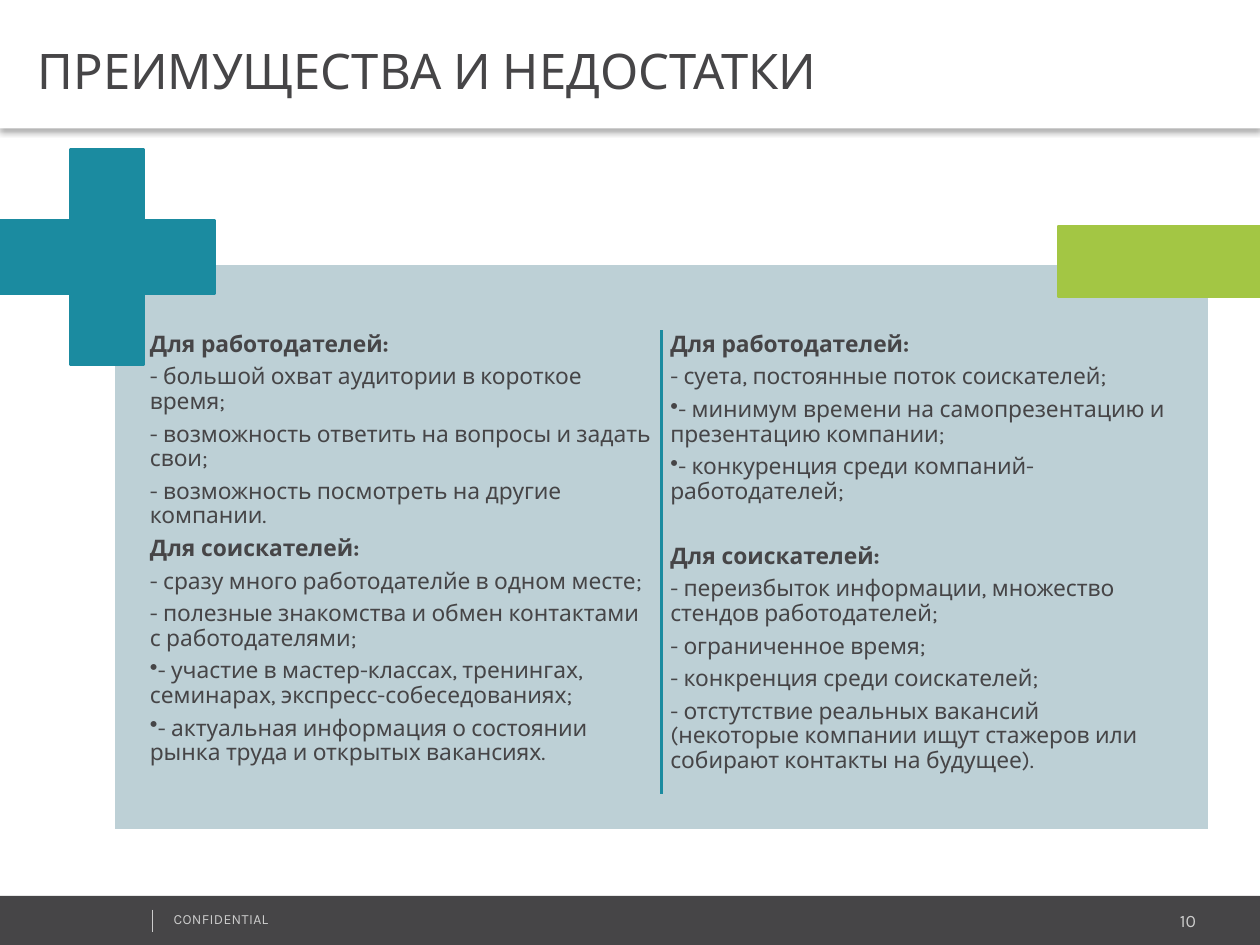
import pptx
import pptx.util
import pptx.dml.color
import pptx.enum.shapes
import pptx.enum.text
import pptx.oxml
import pptx.oxml.ns

Inches, Pt = pptx.util.Inches, pptx.util.Pt
RGBColor = pptx.dml.color.RGBColor
MSO_SHAPE = pptx.enum.shapes.MSO_SHAPE
PP_ALIGN = pptx.enum.text.PP_ALIGN
MSO_ANCHOR = pptx.enum.text.MSO_ANCHOR
SubElement = pptx.oxml.parse_xml

# Content: each paragraph is (style, text)
TITLE = "ПРЕИМУЩЕСТВА И НЕДОСТАТКИ"
FOOTER, PAGE_NUMBER = "CONFIDENTIAL", "10"
HEAD, SPACED_HEAD, ITEM, BULLET = "head", "spaced head", "item", "bullet"
ADVANTAGES = [
    (HEAD, "Для работодателей:"),
    (ITEM, "- большой охват аудитории в короткое время;"),
    (ITEM, "- возможность ответить на вопросы и задать свои;"),
    (ITEM, "- возможность посмотреть на другие компании."),
    (HEAD, "Для соискателей:"),
    (ITEM, "- сразу много работодателйе в одном месте;"),
    (ITEM, "- полезные знакомства и обмен контактами с работодателями;"),
    (BULLET, "- участие в мастер-классах, тренингах, семинарах, экспресс-собеседованиях;"),
    (BULLET, "- актуальная информация о состоянии рынка труда и открытых вакансиях."),
]
DRAWBACKS = [
    (HEAD, "Для работодателей:"),
    (ITEM, "- суета, постоянные поток соискателей;"),
    (BULLET, "- минимум времени на самопрезентацию и презентацию компании;"),
    (BULLET, "- конкуренция среди компаний-работодателей;"),
    (SPACED_HEAD, "Для соискателей:"),
    (ITEM, "- переизбыток информации, множество стендов работодателей;"),
    (ITEM, "- ограниченное время;"),
    (ITEM, "- конкренция среди соискателей;"),
    (ITEM, "- отстутствие реальных вакансий (некоторые компании ищут стажеров "
           "или собирают контакты на будущее)."),
]

FONT = "Karla"
WHITE = RGBColor(0xFF, 0xFF, 0xFF)
DARK = RGBColor(0x46, 0x45, 0x47)
LIGHT_GREY = RGBColor(0xCC, 0xCC, 0xCC)
PANEL_BLUE = RGBColor(0xBD, 0xD0, 0xD6)
TEAL = RGBColor(0x1B, 0x8B, 0xA0)
GREEN = RGBColor(0xA3, 0xC6, 0x44)
NS = pptx.oxml.ns.nsdecls("a")
TITLE_SHADOW = (
    f'<a:effectLst {NS}><a:outerShdw blurRad="{Pt(3.1)}" dist="{Pt(2)}" dir="5400000" '
    'rotWithShape="0"><a:srgbClr val="000000"><a:alpha val="30000"/></a:srgbClr>'
    '</a:outerShdw></a:effectLst>')

deck = pptx.Presentation()
deck.slide_width, deck.slide_height = Inches(10), Inches(7.5)
slide = deck.slides.add_slide(deck.slide_layouts[6])


def add_block(kind, box, fill, outline=None):
    block = slide.shapes.add_shape(kind, *map(Inches, box))
    block.shadow.inherit = False
    block.fill.solid()
    block.fill.fore_color.rgb = fill
    if outline is None:
        block.line.fill.background()
    else:
        block.line.color.rgb = outline
        block.line.width = Pt(2)
    return block


def add_rule(x, top, bottom, color, width):
    rule = slide.shapes.add_connector(
        pptx.enum.shapes.MSO_CONNECTOR.STRAIGHT,
        Inches(x), Inches(top), Inches(x), Inches(bottom))
    rule.line.color.rgb = color
    rule.line.width = Pt(width)
    rule._element.spPr.append(pptx.oxml.parse_xml(f"<a:effectLst {NS}/>"))


def set_font(run, size, color, bold=False):
    run.font.name, run.font.size, run.font.bold = FONT, Pt(size), bold
    run.font.color.rgb = color


def add_footer_text(text, box, size, align):
    frame = slide.shapes.add_textbox(*map(Inches, box)).text_frame
    frame.word_wrap = True
    frame.text = text
    frame.paragraphs[0].alignment = align
    run = frame.paragraphs[0].runs[0]
    set_font(run, size, LIGHT_GREY)
    return run


def add_column(entries, left):
    box = map(Inches, (left, 2.61, 4.04, 3.85))
    frame = slide.shapes.add_textbox(*box).text_frame
    frame.word_wrap = True
    frame.margin_left = frame.margin_right = Inches(0.03)
    frame.margin_top = frame.margin_bottom = Inches(0.03)
    frame.text = "\n".join(text for _, text in entries)
    for paragraph, (style, _) in zip(frame.paragraphs, entries):
        paragraph.line_spacing = 0.9
        paragraph.space_after = Pt(4.55)
        if style == SPACED_HEAD:
            paragraph.space_before = Pt(18.5)
        if style == BULLET:
            paragraph._p.get_or_add_pPr().append(
                pptx.oxml.parse_xml(f'<a:buChar {NS} char="•"/>'))
        set_font(paragraph.runs[0], 13, DARK, style in (HEAD, SPACED_HEAD))


# Footer
add_block(MSO_SHAPE.RECTANGLE, (0, 7.11, 10, 0.39), DARK)
add_footer_text(PAGE_NUMBER, (7.96, 7.17, 1.63, 0.27), 10, PP_ALIGN.RIGHT)
confidential = add_footer_text(FOOTER, (1.28, 7.18, 2.53, 0.24), 8, PP_ALIGN.LEFT)
confidential._r.get_or_add_rPr().set("spc", "20")
add_rule(1.21, 7.22, 7.4, LIGHT_GREY, 0.25)

# Title band with its shadow
title = add_block(MSO_SHAPE.RECTANGLE, (0, 0, 10, 1.02), WHITE)
title_props = title._element.spPr
title_props.remove(title_props.find(pptx.oxml.ns.qn("a:effectLst")))
title_props.append(pptx.oxml.parse_xml(TITLE_SHADOW))
title_frame = title.text_frame
title_frame.margin_left, title_frame.margin_right = Inches(0.3), Inches(0.07)
title_frame.margin_top = title_frame.margin_bottom = Inches(0.04)
title_frame.vertical_anchor = MSO_ANCHOR.MIDDLE
title_frame.text = TITLE
title_frame.paragraphs[0].alignment = PP_ALIGN.LEFT
title_frame.paragraphs[0].line_spacing = 1.2
set_font(title_frame.paragraphs[0].runs[0], 28, DARK)

# Panel with the two columns
add_block(MSO_SHAPE.RECTANGLE, (0.9, 2.09, 8.7, 4.5), PANEL_BLUE, WHITE)
add_column(ADVANTAGES, 1.16)
add_column(DRAWBACKS, 5.29)

# Plus and minus signs, column divider
plus = add_block(MSO_SHAPE.CROSS, (0, 1.19, 1.7, 1.7), TEAL, TEAL)
plus.adjustments[0] = 0.33
add_block(MSO_SHAPE.RECTANGLE, (8.4, 1.8, 1.6, 0.55), GREEN, GREEN)
add_rule(5.25, 2.62, 6.3, TEAL, 2)

deck.save("out.pptx")
